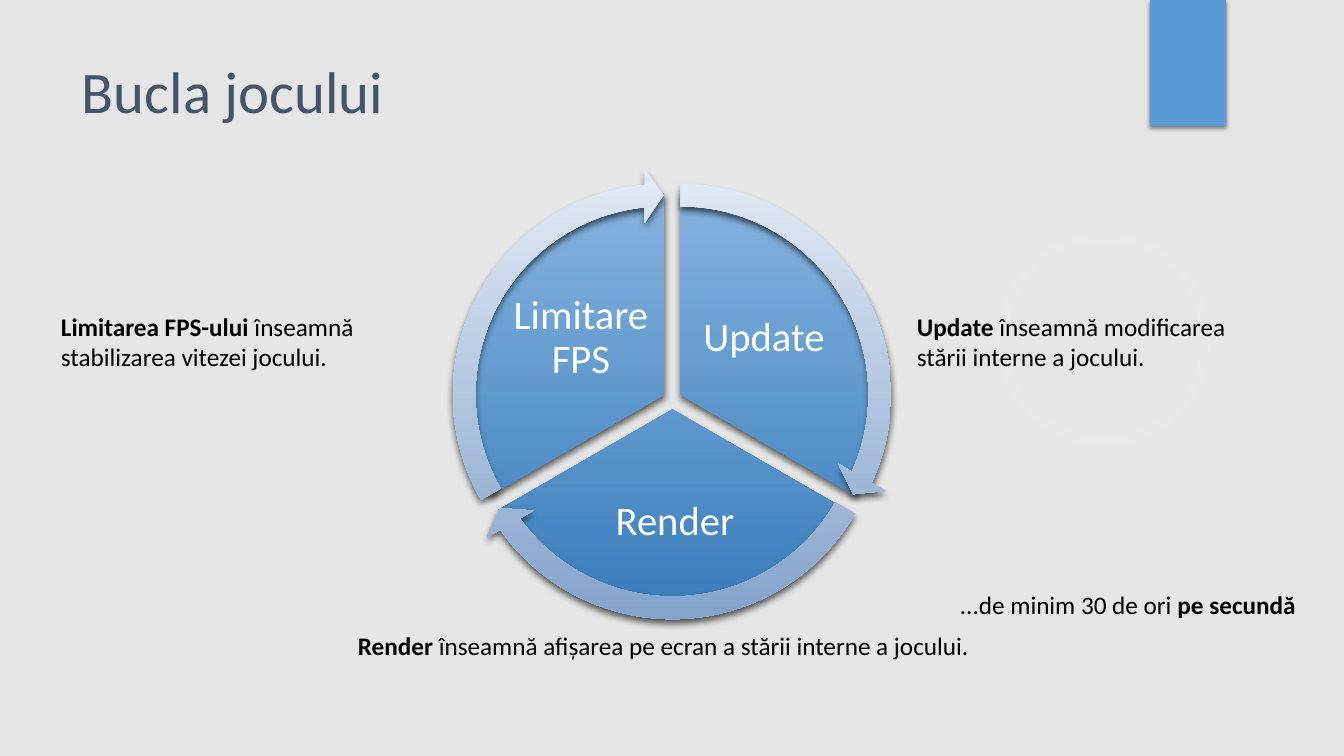
from dataclasses import dataclass

from lxml import etree
from pptx import Presentation
from pptx import util as u
from pptx.dml.color import RGBColor
from pptx.enum import shapes, text
from pptx.oxml import parse_xml
from pptx.oxml.ns import nsdecls, qn

FONT = "Calibri"
COLORS = {
    "background": "E7E6E6",
    "glow": "F5F5F5",
    "accent": "5B9BD5",
    "title": "44546A",
    "slice_top": "85B3DF",
    "slice_bottom": "397DBB",
    "arrow_top": "E3EBF6",
    "arrow_bottom": "81A1CA",
    "label": "FFFFFF",
    "body": "000000",
}
Kind = shapes.MSO_SHAPE
Box = tuple[int, int, int, int]
Runs = list[tuple[str, bool]]


@dataclass
class Stage:
    """One third of the loop; angles are in the units of shape adjustments."""
    label: str
    label_box: Box
    slice_at: tuple[int, int]
    slice_angles: tuple[float, float]
    arrow_at: tuple[int, int]
    arrow_angles: tuple[float, float]


@dataclass
class Note:
    runs: Runs
    box: Box
    wrap: bool = True


SLICE_SIZE = 403
ARROW_SIZE = 453
STAGES = [
    Stage("Update", (692, 278, 144, 120), (479, 193), (162, 18), (454, 168), (14.73, 161.99)),
    Stage("Render", (567, 469, 216, 106), (471, 208), (18, 90), (446, 182), (86.72, 18)),
    Stage("Limitare FPS", (509, 278, 144, 120), (463, 193), (90, 162), (437, 168), (158.73, 90)),
]
NOTES = [
    Note([("Update ", True), ("înseamnă modificarea stării interne a jocului.", False)],
         (907, 306, 375, 72)),
    Note([("Render", True), (" înseamnă afișarea pe ecran a stării interne a jocului.", False)],
         (348, 625, 648, 40)),
    Note([("Limitarea FPS-ului", True), (" înseamnă stabilizarea vitezei jocului.", False)],
         (51, 306, 336, 72)),
    Note([("...de minim 30 de ori ", False), ("pe secundă", True)],
         (950, 584, 360, 40), wrap=False),
]


def px(length: int) -> int:
    return round(length * 914400 / 100.8)


def color(name: str) -> RGBColor:
    return RGBColor.from_string(COLORS[name])


def add_shape(page, kind, box: Box, adjustments: tuple[float, ...] = ()):
    shape = page.shapes.add_shape(kind, *map(px, box))
    shape.shadow.inherit = False
    shape.line.fill.background()
    for index, value in enumerate(adjustments):
        shape.adjustments[index] = value
    return shape


def fill_down(shape, top: str, bottom: str) -> None:
    """Fill with a gradient that runs from top to bottom."""
    shape.fill.gradient()
    shape.fill.gradient_angle = 270
    for stop, name in zip(shape.fill.gradient_stops, (top, bottom)):
        stop.color.rgb = color(name)


def cast_shadow(shape, opacity: int, blur: int, distance: int) -> None:
    """Put a black shadow below the shape; blur and distance are in points."""
    effects = shape._element.spPr.find(qn("a:effectLst"))
    shadow = etree.SubElement(
        effects, qn("a:outerShdw"), blurRad=str(u.Pt(blur)), dist=str(u.Pt(distance)),
        dir="5400000", algn="ctr", rotWithShape="0")
    black = etree.SubElement(shadow, qn("a:srgbClr"), val="000000")
    etree.SubElement(black, qn("a:alpha"), val=str(opacity * 1000))


def add_glow(page, box: Box) -> None:
    """Add a faint circle that fades along its radius."""
    glow = add_shape(page, Kind.OVAL, box)
    stops = "".join(
        f'<a:gs pos="{place * 1000}"><a:srgbClr val="{COLORS["glow"]}">'
        f'<a:alpha val="{opacity * 1000}"/></a:srgbClr></a:gs>'
        for place, opacity in ((0, 7), (36, 6), (69, 0)))
    gradient = parse_xml(
        f'<a:gradFill {nsdecls("a")}><a:gsLst>{stops}</a:gsLst><a:path path="circle">'
        '<a:fillToRect l="50000" t="50000" r="50000" b="50000"/></a:path></a:gradFill>')
    glow._element.spPr.find(qn("a:prstGeom")).addnext(gradient)


def add_text(page, runs: Runs, box: Box, *, size: int, ink: str, wrap: bool = True,
             grow: bool = False, label: bool = False) -> None:
    """Add a text box; a label is centred both ways with narrow margins."""
    frame = page.shapes.add_textbox(*map(px, box)).text_frame
    frame.word_wrap = wrap
    if grow:
        frame.auto_size = text.MSO_AUTO_SIZE.SHAPE_TO_FIT_TEXT
    para = frame.paragraphs[0]
    if label:
        frame.vertical_anchor = text.MSO_ANCHOR.MIDDLE
        frame.margin_left = frame.margin_right = px(4)
        frame.margin_top = frame.margin_bottom = px(4)
        para.alignment = text.PP_ALIGN.CENTER
        para.line_spacing = 0.9
    for words, bold in runs:
        span = para.add_run()
        span.text = words
        span.font.name = FONT
        span.font.size = u.Pt(size)
        span.font.bold = bold
        span.font.color.rgb = color(ink)


def add_loop(page) -> None:
    for stage in STAGES:
        piece = add_shape(page, Kind.PIE, (*stage.slice_at, SLICE_SIZE, SLICE_SIZE),
                          stage.slice_angles)
        fill_down(piece, "slice_top", "slice_bottom")
        cast_shadow(piece, 60, 5, 3)
        add_text(page, [(stage.label, False)], stage.label_box, size=29, ink="label", label=True)
    for stage in STAGES:
        arrow = add_shape(page, Kind.CIRCULAR_ARROW, (*stage.arrow_at, ARROW_SIZE, ARROW_SIZE),
                          (0.05, 3.28, *stage.arrow_angles, 0.06))
        fill_down(arrow, "arrow_top", "arrow_bottom")
        cast_shadow(arrow, 60, 5, 3)


def main() -> None:
    deck = Presentation()
    deck.slide_width, deck.slide_height = px(1344), px(756)
    page = deck.slides.add_slide(deck.slide_layouts[6])
    page.background.fill.solid()
    page.background.fill.fore_color.rgb = color("background")

    add_glow(page, (949, 184, 310, 310))
    tab = add_shape(page, Kind.RECTANGLE, (1150, 0, 76, 126))
    tab.fill.solid()
    tab.fill.fore_color.rgb = color("accent")
    cast_shadow(tab, 45, 3, 2)

    add_text(page, [("Bucla jocului", False)], (72, 50, 1037, 154), size=42, ink="title")
    add_loop(page)
    for note in NOTES:
        add_text(page, note.runs, note.box, size=18, ink="body", wrap=note.wrap, grow=True)
    deck.save("out.pptx")


if __name__ == "__main__":
    main()
